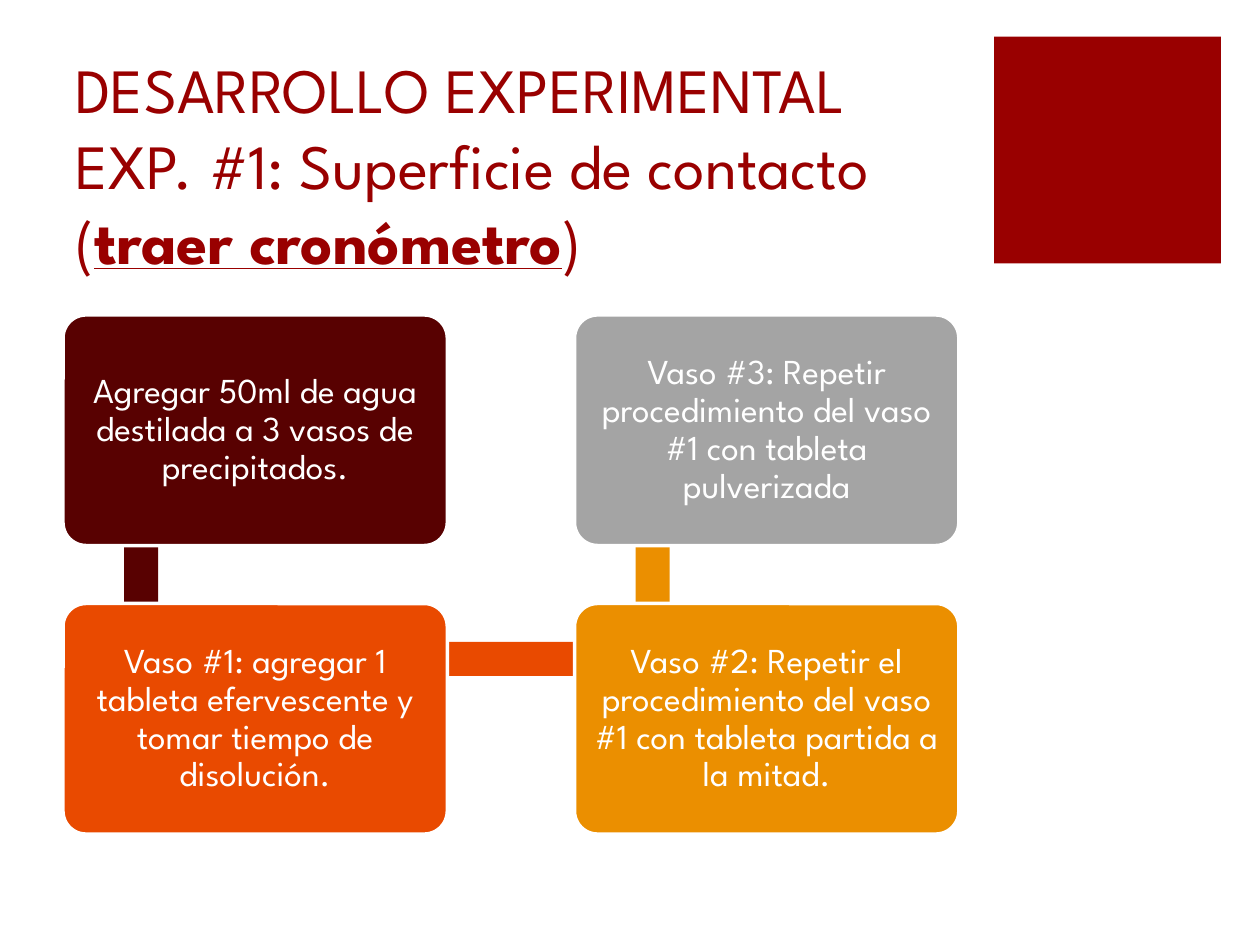
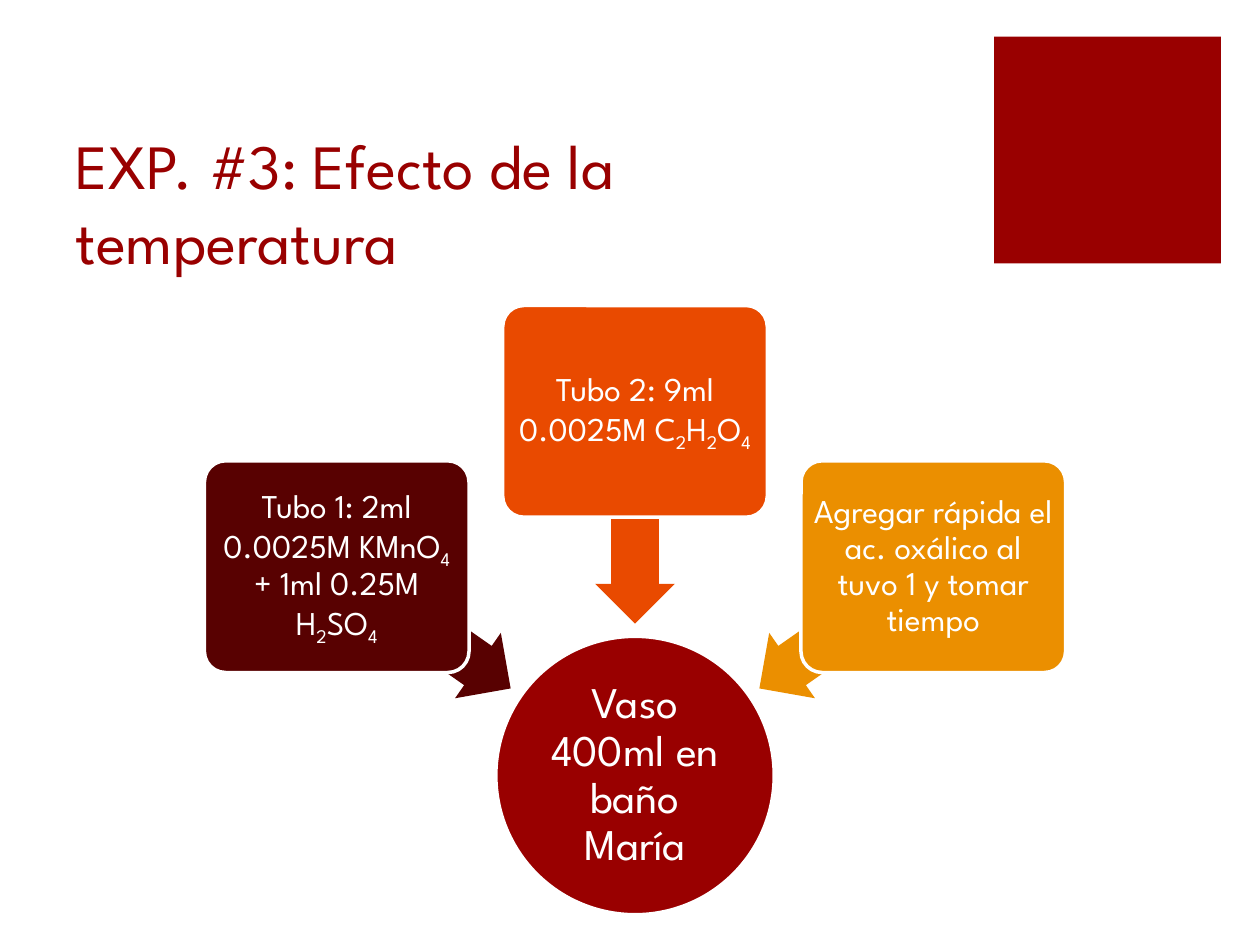
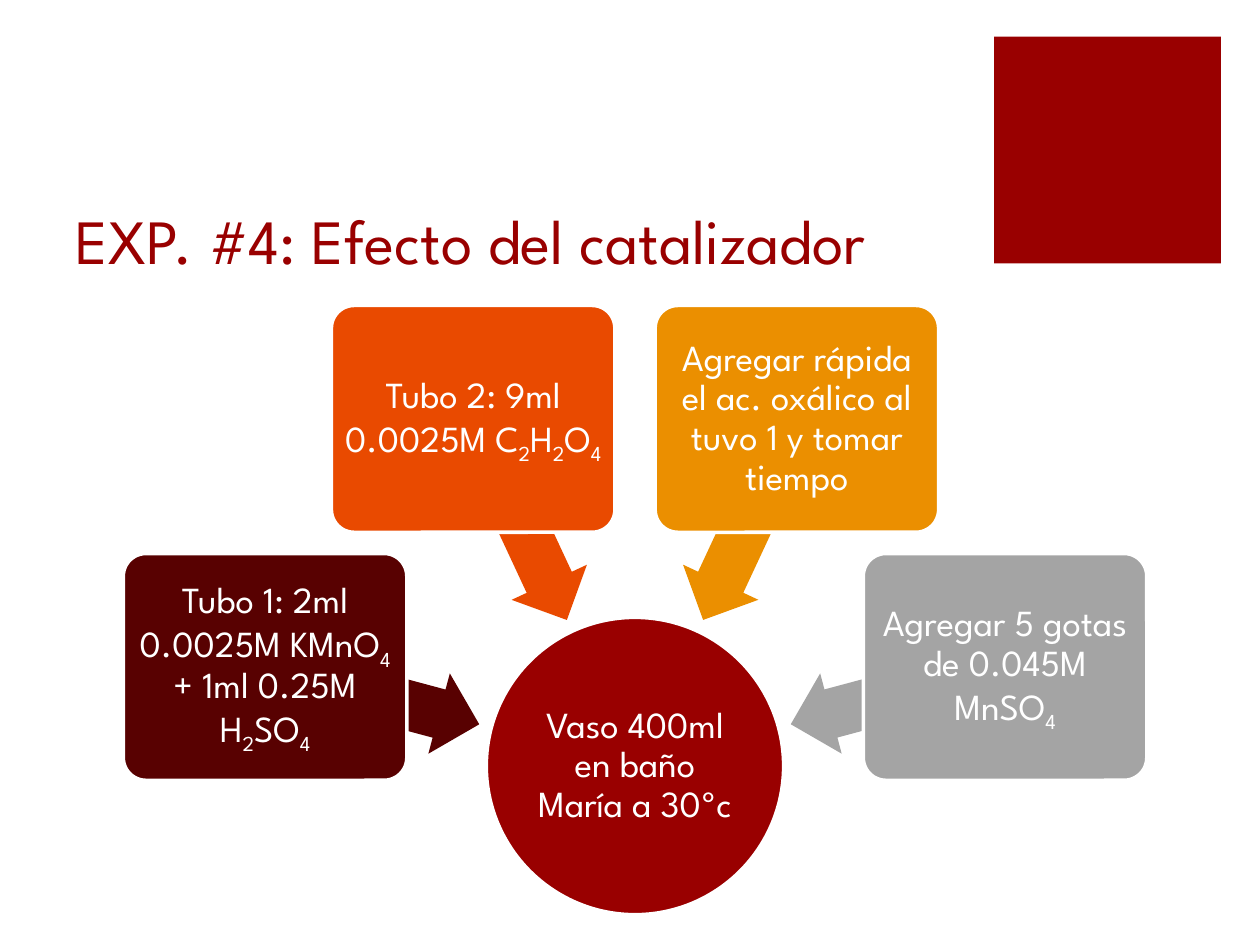
from math import cos, radians, sin

from pptx import Presentation
from pptx.dml.color import RGBColor
from pptx.enum.shapes import MSO_SHAPE
from pptx.enum.text import MSO_ANCHOR, PP_ALIGN
from pptx.util import Inches, Pt

FONT = "League Spartan"
WHITE = RGBColor(0xFF, 0xFF, 0xFF)
RED = RGBColor(0x99, 0x00, 0x00)
MAROON = RGBColor(0x58, 0x01, 0x01)
ORANGE = RGBColor(0xE9, 0x4A, 0x00)
AMBER = RGBColor(0xEB, 0x8F, 0x00)
GRAY = RGBColor(0xA4, 0xA4, 0xA4)
STEP_COLORS = (MAROON, ORANGE, AMBER, GRAY)

PAGE_WIDTH, PAGE_HEIGHT = 10, 7.5
GRID_LEFT, GRID_TOP = 0.5, 2.5
COLUMN_PITCH, ROW_PITCH = 4.06, 2.29
CARD_WIDTH, CARD_HEIGHT = 3.05, 1.83
BAR_THICKNESS = 0.27
HUB_X, HUB_BOTTOM = 5.04, 7.26

TUBE_1 = "Tubo 1: 2ml 0.0025M KMnO_4_ + 1ml 0.25M H_2_SO_4"
TUBE_2 = "Tubo 2: 9ml 0.0025M C_2_H_2_O_4"
ADD_ACID = "Agregar rápida el ac. oxálico al tuvo 1 y tomar tiempo"


def add_centred(page, kind, x, y, width, height, color, rotation=0):
    shape = page.shapes.add_shape(
        kind, Inches(x - width / 2), Inches(y - height / 2), Inches(width), Inches(height)
    )
    shape.shadow.inherit = False
    shape.fill.solid()
    shape.fill.fore_color.rgb = color
    shape.line.fill.background()
    shape.rotation = rotation
    return shape


def style_paragraph(para, size, color):
    para.font.name = FONT
    para.font.size = Pt(size)
    para.font.color.rgb = color


def write_label(shape, text, size, margin):
    shape.line.color.rgb = WHITE
    shape.line.width = Pt(2)
    frame = shape.text_frame
    frame.word_wrap = True
    frame.vertical_anchor = MSO_ANCHOR.MIDDLE
    frame.margin_left = frame.margin_right = Inches(margin)
    frame.margin_top = frame.margin_bottom = Inches(margin)
    para = frame.paragraphs[0]
    para.alignment = PP_ALIGN.CENTER
    para.line_spacing = 0.9
    style_paragraph(para, size, WHITE)
    for index, part in enumerate(text.split("_")):
        span = para.add_run()
        span.text = part
        if index % 2:
            span.font._element.set("baseline", "-25000")


def add_card(page, x, y, width, height, color, text, size, margin):
    card = add_centred(page, MSO_SHAPE.ROUNDED_RECTANGLE, x, y, width, height, color)
    card.adjustments[0] = 0.1
    write_label(card, text, size, margin)


def add_page(deck, title_lines, emphasis="", ending=""):
    page = deck.slides.add_slide(deck.slide_layouts[6])
    add_centred(page, MSO_SHAPE.RECTANGLE, 8.79, 1.19, 1.8, 1.8, RED)
    box = page.shapes.add_textbox(Inches(GRID_LEFT), Inches(1), Inches(7.12), Inches(1.25))
    frame = box.text_frame
    frame.word_wrap = True
    frame.vertical_anchor = MSO_ANCHOR.BOTTOM
    para = frame.paragraphs[0]
    style_paragraph(para, 36, RED)
    for index, line in enumerate(title_lines):
        if index:
            para.add_line_break()
        para.add_run().text = line
    if emphasis:
        span = para.add_run()
        span.text = emphasis
        span.font.bold = True
        span.font.underline = True
        para.add_run().text = ending
    return page


def add_snake(page, steps):
    cells = ((0, 0), (0, 1), (1, 1), (1, 0))
    row_middle = GRID_TOP + (CARD_HEIGHT + ROW_PITCH) / 2
    bars = (
        (GRID_LEFT + 0.62, row_middle, 2.27, 90),
        (3.15, 5.23, 4.04, 0),
        (GRID_LEFT + COLUMN_PITCH + 0.62, row_middle, 2.27, 270),
        None,
    )
    for (column, row), bar, color, text in zip(cells, bars, STEP_COLORS, steps):
        if bar:
            x, y, length, rotation = bar
            add_centred(page, MSO_SHAPE.RECTANGLE, x, y, length, BAR_THICKNESS, color, rotation)
        x = GRID_LEFT + column * COLUMN_PITCH + CARD_WIDTH / 2
        y = GRID_TOP + row * ROW_PITCH + CARD_HEIGHT / 2
        add_card(page, x, y, CARD_WIDTH, CARD_HEIGHT, color, text, 20, 0.08)


def add_radial(page, hub_text, hub_size, hub_diameter, steps, step_size, card_width,
               card_radius, arrow_radius, arrow_length, first_angle, angle_step):
    hub_y = HUB_BOTTOM - hub_diameter / 2
    hub = add_centred(page, MSO_SHAPE.OVAL, HUB_X, hub_y, hub_diameter, hub_diameter, RED)
    write_label(hub, hub_text, hub_size, 0.02)
    for index, (color, text) in enumerate(zip(STEP_COLORS, steps)):
        angle = first_angle + index * angle_step
        across, down = cos(radians(angle)), sin(radians(angle))
        arrow = add_centred(
            page, MSO_SHAPE.LEFT_ARROW, HUB_X + arrow_radius * across,
            hub_y + arrow_radius * down, arrow_length, arrow_length * 0.375, color, angle
        )
        arrow.adjustments[0] = 0.6
        arrow.adjustments[1] = 0.5
        add_card(page, HUB_X + card_radius * across, hub_y + card_radius * down,
                 card_width, card_width * 0.8, color, text, step_size, 0.04)


def main():
    deck = Presentation()
    deck.slide_width = Inches(PAGE_WIDTH)
    deck.slide_height = Inches(PAGE_HEIGHT)

    contact = add_page(
        deck, ("DESARROLLO EXPERIMENTAL", "EXP. #1: Superficie de contacto ("),
        "traer cronómetro", ")"
    )
    add_snake(contact, (
        "Agregar 50ml de agua destilada a 3 vasos de precipitados.",
        "Vaso #1: agregar 1 tableta efervescente y tomar tiempo de disolución.",
        "Vaso #2: Repetir el procedimiento del vaso #1 con tableta partida a la mitad.",
        "Vaso #3: Repetir procedimiento del vaso #1 con tableta pulverizada",
    ))

    temperature = add_page(deck, ("EXP. #3: Efecto de la temperatura",))
    add_radial(
        temperature, "Vaso 400ml en baño María", 25, 2.21,
        (TUBE_1, TUBE_2, ADD_ACID), 19, card_width=2.1, card_radius=2.89,
        arrow_radius=2.05, arrow_length=1.69, first_angle=215, angle_step=55
    )

    catalyst = add_page(deck, ("EXP. #4: Efecto del catalizador",))
    add_radial(
        catalyst, "Vaso 400ml en baño María a 30ºc", 21, 2.36,
        (TUBE_1, TUBE_2, ADD_ACID, "Agregar 5 gotas de 0.045M MnSO_4"), 21,
        card_width=2.25, card_radius=3.04, arrow_radius=2.16, arrow_length=1.76,
        first_angle=195, angle_step=50
    )

    deck.save("out.pptx")


if __name__ == "__main__":
    main()
